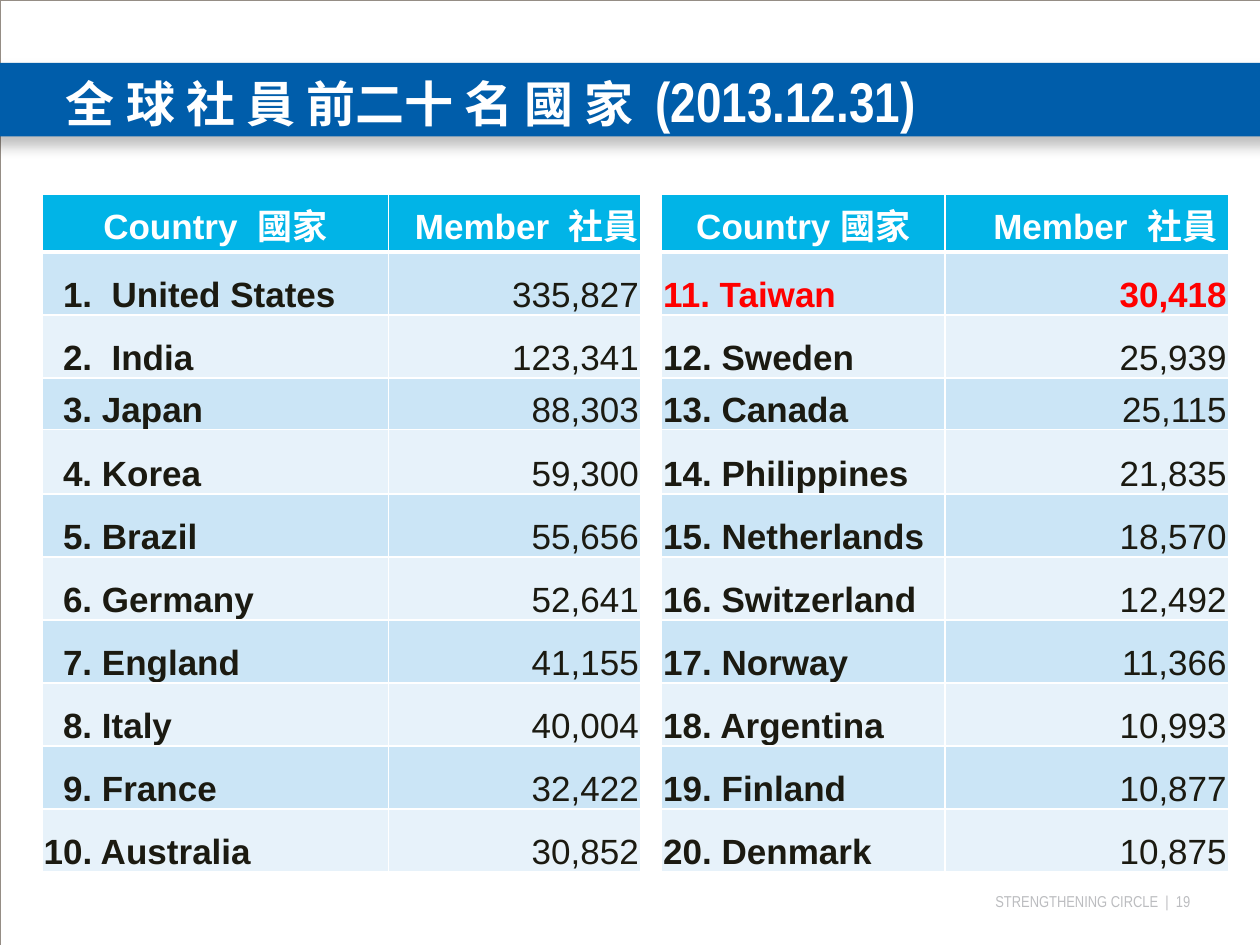
from lxml import etree
from pptx import Presentation
from pptx.dml.color import RGBColor
from pptx.enum import shapes, text
from pptx.oxml import ns
from pptx.util import Cm, Pt

HUES = {
    "white": "FFFFFF", "band": "005DAA", "head": "01B4E7", "odd": "CBE5F6",
    "even": "E7F2FA", "ink": "1B1A11", "red": "FF0000", "foot": "BCBDC0",
    "edge": "958D85", "black": "000000",
}
ROWS = [1.17, 1.27, 1.27, 1.04, 1.3] + [1.27] * 6
LEFT = [
    ("1.  United States", "335,827"), ("2.  India", "123,341"),
    ("3. Japan", "88,303"), ("4. Korea", "59,300"), ("5. Brazil", "55,656"),
    ("6. Germany", "52,641"), ("7. England", "41,155"), ("8. Italy", "40,004"),
    ("9. France", "32,422"), ("10. Australia", "30,852"),
]
RIGHT = [
    ("11. Taiwan", "30,418"), ("12. Sweden", "25,939"),
    ("13. Canada", "25,115"), ("14. Philippines", "21,835"),
    ("15. Netherlands", "18,570"), ("16. Switzerland", "12,492"),
    ("17. Norway", "11,366"), ("18. Argentina", "10,993"),
    ("19. Finland", "10,877"), ("20. Denmark", "10,875"),
]
ALIGN = text.PP_ALIGN


def hue(name):
    """Return the named colour."""
    return RGBColor.from_string(HUES[name])


def sub(node, tag, **attrs):
    """Append a drawing element with attributes."""
    return etree.SubElement(node, ns.qn(tag), {k: str(v) for k, v in attrs.items()})


def add_run(para, words, size, face, color, bold=False):
    """Append one formatted run to a paragraph."""
    run = para.add_run()
    run.text = words
    font = run.font
    font.size, font.name, font.bold = Pt(size), face, bold
    font.color.rgb = hue(color)
    return run


def set_pad(frame, left=0.0):
    """Clear the insets of a frame except the left one."""
    frame.margin_left = Cm(left)
    frame.margin_top = frame.margin_right = frame.margin_bottom = 0


def add_foot(slide):
    """Add the footer line with the page number."""
    frame = slide.shapes.add_textbox(Cm(19.69), Cm(17.98), Cm(4.45), Cm(0.38)).text_frame
    set_pad(frame)
    frame.word_wrap = True
    para = frame.paragraphs[0]
    para.alignment = ALIGN.RIGHT
    add_run(para, "STRENGTHENING CIRCLE  |  19  ", 9, "Arial Narrow", "foot")


def add_rect(slide, box):
    """Add a plain rectangle without shadow."""
    rect = slide.shapes.add_shape(shapes.MSO_SHAPE.RECTANGLE, *map(Cm, box))
    rect.shadow.inherit = False
    return rect


def add_edge(slide):
    """Add the thin outline around the slide."""
    edge = add_rect(slide, (0, 0, 25.4, 19.05))
    edge.fill.background()
    edge.line.color.rgb = hue("edge")
    edge.line.width = Pt(0.13)


def add_band(slide):
    """Add the title band with its soft shadow."""
    band = add_rect(slide, (-0.2, 1.27, 25.83, 1.48))
    band.fill.solid()
    band.fill.fore_color.rgb = hue("band")
    band.line.fill.background()
    fx = band._element.spPr.find(ns.qn("a:effectLst"))
    shade = sub(fx, "a:outerShdw", blurRad=Pt(8), dist=Pt(5), dir=5400000,
                algn="t", rotWithShape=0)
    sub(sub(shade, "a:srgbClr", val=HUES["black"]), "a:alpha", val=25000)


def set_title(slide):
    """Place the title over the band and fill it."""
    title = slide.shapes.title
    title.left, title.top, title.width, title.height = map(Cm, (0, 1.27, 25.4, 1.48))
    slide.shapes._spTree.append(title._element)
    frame = title.text_frame
    set_pad(frame, 1.33)
    frame.auto_size = text.MSO_AUTO_SIZE.NONE
    frame.vertical_anchor = text.MSO_ANCHOR.MIDDLE
    para = frame.paragraphs[0]
    para.alignment = ALIGN.LEFT
    face = "Noto Sans CJK SC"
    run = add_run(para, "全 球 社 員 前二十 名 國 家  ", 28, face, "white", True)
    sub(run.font._element, "a:ea", typeface=face)
    add_run(para, "(2013.12.31)", 32, "Arial Narrow", "white", True)


def set_edges(cell, row):
    """Draw white cell borders, heavier under the header."""
    props = cell._tc.get_or_add_tcPr()
    wide = {"T": 3 if row == 1 else 1, "B": 3 if row == 0 else 1}
    for side in "LRTB":
        line = sub(props, "a:ln" + side, w=Pt(wide.get(side, 1)))
        sub(sub(line, "a:solidFill"), "a:srgbClr", val=HUES["white"])


def set_cell(cell, row, words, align, color, bold):
    """Format one cell and write its text."""
    set_edges(cell, row)
    cell.fill.solid()
    cell.fill.fore_color.rgb = hue("head" if row == 0 else "odd" if row % 2 else "even")
    cell.margin_left = cell.margin_right = cell.margin_top = Cm(0.03)
    cell.margin_bottom = 0
    anchor = text.MSO_ANCHOR
    cell.vertical_anchor = anchor.BOTTOM if row else anchor.MIDDLE
    para = cell.text_frame.paragraphs[0]
    para.alignment = align
    add_run(para, words, 20, "Arial", color, bold)


def add_ranks(slide, left, cols, heads, ranks, accent=None):
    """Add a ranking table of countries and members."""
    frame = slide.shapes.add_table(len(ROWS), 2, Cm(left), Cm(3.91),
                                   Cm(sum(cols)), Cm(sum(ROWS)))
    table = frame.table
    table.horz_banding = False
    for col, width in zip(table.columns, cols):
        col.width = Cm(width)
    for row, high in zip(table.rows, ROWS):
        row.height = Cm(high)
    for i, pair in enumerate([heads] + ranks):
        hot = pair[0] == accent
        color = "white" if i == 0 else "red" if hot else "ink"
        first = ALIGN.LEFT if i else ALIGN.CENTER
        set_cell(table.cell(i, 0), i, pair[0], first, color, True)
        set_cell(table.cell(i, 1), i, pair[1], ALIGN.RIGHT, color, i == 0 or hot)
        if i and pair[0].index(".") == 1:
            table.cell(i, 0).margin_left = Cm(0.42)
    return table


def main():
    """Build the slide and save it."""
    deck = Presentation()
    deck.slide_width, deck.slide_height = Cm(25.4), Cm(19.05)
    slide = deck.slides.add_slide(deck.slide_layouts[5])
    add_foot(slide)
    add_edge(slide)
    add_band(slide)
    set_title(slide)
    add_ranks(slide, 0.85, (6.98, 5.08), ("Country  國家", "Member  社員"), LEFT)
    table = add_ranks(slide, 13.34, (5.71, 5.71), ("Country 國家", "Member  社員"),
                      RIGHT, "11. Taiwan")
    table.cell(0, 1).margin_right = Cm(0.22)
    deck.save("out.pptx")


if __name__ == "__main__":
    main()
